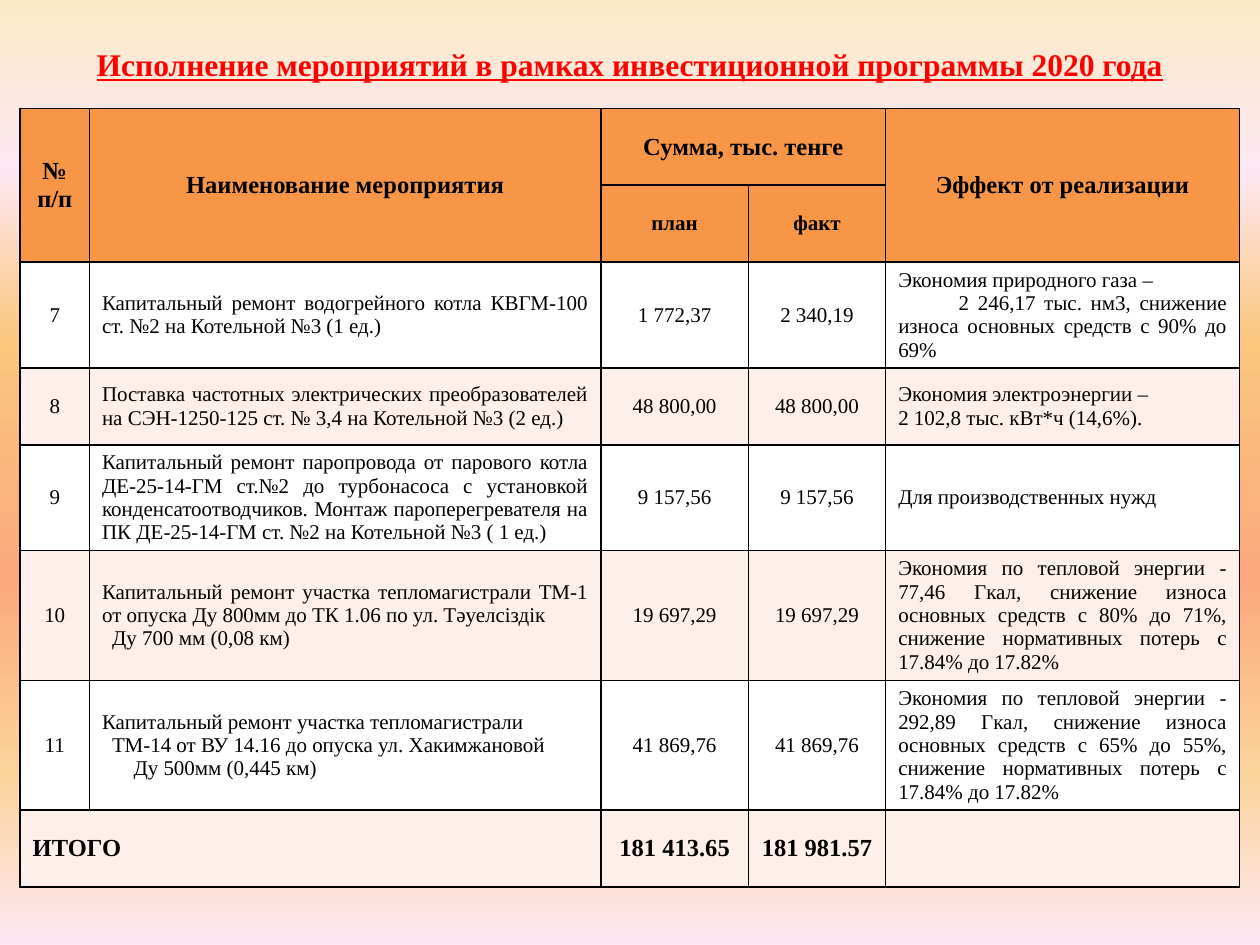
from dataclasses import dataclass

from lxml.etree import SubElement
from pptx import Presentation
from pptx.dml.color import RGBColor
from pptx.enum.text import MSO_ANCHOR, PP_ALIGN
from pptx.oxml.ns import qn
from pptx.util import Inches, Pt


@dataclass(frozen=True)
class Theme:
    """Colours, font and type sizes of the slide."""
    font: str = "Times New Roman"
    title: str = "FF0000"
    ink: str = "000000"
    header: str = "F79646"
    bands: tuple = ("FFFFFF", "FDEFE9")
    background: tuple = ((0, "FBEAC7"), (18, "FEE7F2"), (36, "FAC77D"),
                         (61, "FBA97D"), (82, "FBD49C"), (100, "FEE7F2"))
    title_size: int = 18
    head_size: int = 14
    body_size: int = 12


THEME = Theme()
TITLE = "Исполнение мероприятий в рамках инвестиционной программы 2020 года"
COLUMNS = (0.55, 4.06, 1.17, 1.09, 2.81)
ROWS = (0.61, 0.61, 0.84, 0.61, 0.84, 1.03, 1.03, 0.61)
AMOUNT_COLUMNS = (2, 3)
TEXT_COLUMNS = (1, 4)
HEADERS = (
    (0, 0, 1, 0, "№ п/п"),
    (0, 1, 1, 1, "Наименование мероприятия"),
    (0, 2, 0, 3, "Сумма, тыс. тенге"),
    (0, 4, 1, 4, "Эффект от реализации"),
)
MEASURES = (
    ("7",
     "Капитальный ремонт водогрейного котла КВГМ-100 ст. №2 на Котельной №3 (1 ед.)",
     "1 772,37", "2 340,19",
     (("Экономия природного газа –", 0),
      ("2 246,17 тыс. нм3, снижение износа основных средств с 90% до 69%", 0.48))),
    ("8",
     "Поставка частотных электрических преобразователей на СЭН-1250-125 "
     "ст. № 3,4 на Котельной №3 (2 ед.)",
     "48 800,00", "48 800,00",
     (("Экономия электроэнергии –", 0), ("2 102,8 тыс. кВт*ч (14,6%).", 0))),
    ("9",
     "Капитальный ремонт паропровода от парового котла ДЕ-25-14-ГМ ст.№2 "
     "до турбонасоса с установкой конденсатоотводчиков. Монтаж "
     "пароперегревателя на ПК ДЕ-25-14-ГМ ст. №2 на Котельной №3 ( 1 ед.)",
     "9 157,56", "9 157,56", "Для производственных нужд"),
    ("10",
     (("Капитальный ремонт участка тепломагистрали ТМ-1 "
       "от опуска Ду 800мм до ТК 1.06 по ул. Тәуелсіздік", 0),
      ("Ду 700 мм (0,08 км)", 0.08)),
     "19 697,29", "19 697,29",
     "Экономия по тепловой энергии - 77,46 Гкал, снижение износа основных "
     "средств с 80% до 71%, снижение нормативных потерь с 17.84% до 17.82%"),
    ("11",
     (("Капитальный ремонт участка тепломагистрали", 0),
      ("ТМ-14 от ВУ 14.16 до опуска ул. Хакимжановой", 0.08),
      ("Ду 500мм (0,445 км)", 0.25)),
     "41 869,76", "41 869,76",
     "Экономия по тепловой энергии - 292,89 Гкал, снижение износа основных "
     "средств с 65% до 55%, снижение нормативных потерь с 17.84% до 17.82%"),
)
TOTALS = ((0, "ИТОГО"), (2, "181 413.65"), (3, "181 981.57"))


def paint_background(s):
    """Fill the slide with the vertical gradient."""
    s.background.fill.gradient()
    grad = s._element.find(".//" + qn("a:gradFill"))
    stops = grad.find(qn("a:gsLst"))
    for stop in list(stops):
        stops.remove(stop)
    for position, colour in THEME.background:
        stop = SubElement(stops, qn("a:gs"), pos=str(position * 1000))
        SubElement(stop, qn("a:srgbClr"), val=colour)
    grad.find(qn("a:lin")).set("ang", "5400000")


def add_run(p, text, size, colour=THEME.ink, bold=False, underline=False):
    """Add one formatted run to a paragraph."""
    r = p.add_run()
    r.text = text
    r.font.name = THEME.font
    r.font.size = Pt(size)
    r.font.bold = bold
    r.font.underline = underline
    r.font.color.rgb = RGBColor.from_string(colour)


def add_title(s):
    """Place and write the slide title."""
    sp = s.shapes.title
    sp.left, sp.top = Inches(0.31), Inches(0.16)
    sp.width, sp.height = Inches(9.38), Inches(0.7)
    tf = sp.text_frame
    tf.vertical_anchor = MSO_ANCHOR.MIDDLE
    p = tf.paragraphs[0]
    p.alignment = PP_ALIGN.CENTER
    add_run(p, TITLE, THEME.title_size, THEME.title, bold=True, underline=True)


def write_cell(cell, content, size, bold=False, align=PP_ALIGN.CENTER):
    """Write a string, or lines with first-line indents, into a cell."""
    lines = ((content, 0),) if isinstance(content, str) else content
    tf = cell.text_frame
    for i, (text, indent) in enumerate(lines):
        p = tf.add_paragraph() if i else tf.paragraphs[0]
        p.alignment = align
        if indent:
            p._p.get_or_add_pPr().set("indent", str(Inches(indent)))
        add_run(p, text, size, bold=bold)


def style_cell(cell, colour):
    """Give a cell its fill, anchor and black border."""
    cell.vertical_anchor = MSO_ANCHOR.MIDDLE
    pr = cell._tc.get_or_add_tcPr()
    for side in ("a:lnL", "a:lnR", "a:lnT", "a:lnB"):
        line = SubElement(pr, qn(side), w=str(Pt(1)))
        SubElement(SubElement(line, qn("a:solidFill")), qn("a:srgbClr"), val=THEME.ink)
    cell.fill.solid()
    cell.fill.fore_color.rgb = RGBColor.from_string(colour)


def add_grid(s):
    """Add the styled, empty table and return it."""
    table = s.shapes.add_table(len(ROWS), len(COLUMNS), Inches(0.16), Inches(0.86),
                               Inches(sum(COLUMNS)), Inches(sum(ROWS))).table
    for column, width in zip(table.columns, COLUMNS):
        column.width = Inches(width)
    for row, height in zip(table.rows, ROWS):
        row.height = Inches(height)
    for i in range(len(ROWS)):
        for j in range(len(COLUMNS)):
            cell = table.cell(i, j)
            style_cell(cell, THEME.header if i < 2 else THEME.bands[i % 2])
            if i and j in AMOUNT_COLUMNS:
                cell.margin_left = cell.margin_right = Inches(0.07)
                cell.margin_top = cell.margin_bottom = 0
    return table


def fill_table(table):
    """Write the headings, measures and totals."""
    for top, left, bottom, right, text in HEADERS:
        table.cell(top, left).merge(table.cell(bottom, right))
        write_cell(table.cell(top, left), text, THEME.head_size, bold=True)
    for j, text in zip(AMOUNT_COLUMNS, ("план", "факт")):
        write_cell(table.cell(1, j), text, THEME.body_size, bold=True)
    for i, measure in enumerate(MEASURES, 2):
        for j, content in enumerate(measure):
            align = PP_ALIGN.JUSTIFY if j in TEXT_COLUMNS else PP_ALIGN.CENTER
            write_cell(table.cell(i, j), content, THEME.body_size, align=align)
    last = len(ROWS) - 1
    table.cell(last, 0).merge(table.cell(last, 1))
    for j, text in TOTALS:
        align = PP_ALIGN.CENTER if j else PP_ALIGN.JUSTIFY
        write_cell(table.cell(last, j), text, THEME.head_size, bold=True, align=align)


def main():
    """Build and save the slide."""
    prs = Presentation()
    prs.slide_width, prs.slide_height = Inches(10), Inches(7.5)
    s = prs.slides.add_slide(prs.slide_layouts[5])
    paint_background(s)
    add_title(s)
    fill_table(add_grid(s))
    prs.save("out.pptx")


if __name__ == "__main__":
    main()
